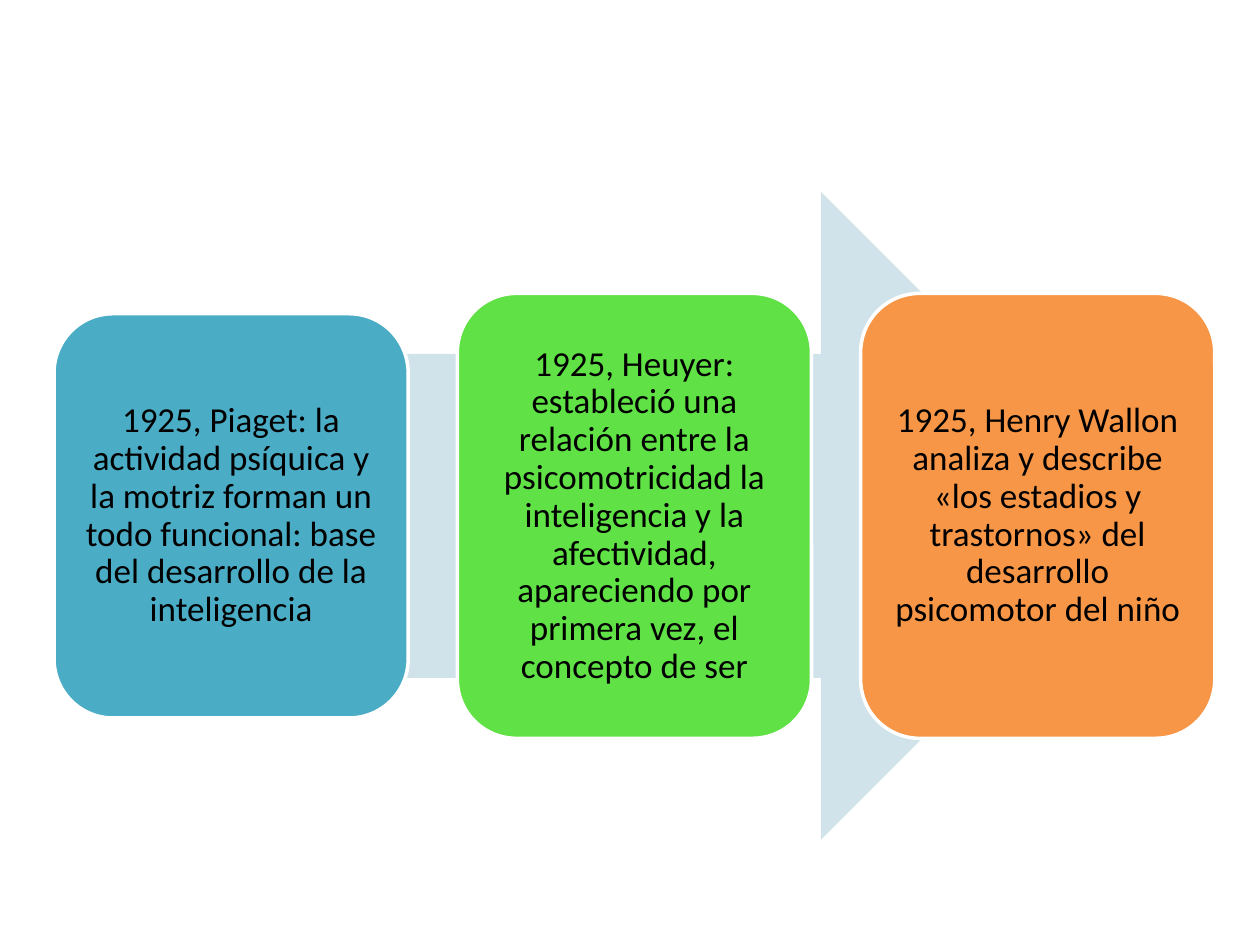
"""Build a slide with three milestones of 1925 laid over a broad arrow."""
from pptx import Presentation
from pptx.dml.color import RGBColor
from pptx.enum.shapes import MSO_SHAPE
from pptx.enum.text import MSO_ANCHOR, PP_ALIGN
from pptx.util import Cm, Pt

BLACK = RGBColor(0x00, 0x00, 0x00)
WHITE = RGBColor(0xFF, 0xFF, 0xFF)
PALE_BLUE = RGBColor(0xD0, 0xE3, 0xEA)
TEAL = RGBColor(0x4B, 0xAC, 0xC6)
GREEN = RGBColor(0x60, 0xE1, 0x46)
ORANGE = RGBColor(0xF7, 0x96, 0x46)

MIDDLE = 10.4
CARD_LEFT, CARD_WIDTH, CARD_STEP = 1.09, 7.14, 8.13

MILESTONES = [
    (TEAL, 8.15, "1925, Piaget: la actividad psíquica y la motriz forman un todo "
                 "funcional: base del desarrollo de la inteligencia"),
    (GREEN, 8.97, "1925, Heuyer: estableció una relación entre la psicomotricidad la "
                  "inteligencia y la afectividad, apareciendo por primera vez, el "
                  "concepto de ser"),
    (ORANGE, 8.97, "1925, Henry Wallon analiza y describe «los estadios y trastornos» "
                   "del desarrollo psicomotor del niño"),
]


def apply_format(target, values):
    for name, value in values.items():
        setattr(target, name, value)


class SlideBuilder:
    frame_format = {
        "word_wrap": True,
        "vertical_anchor": MSO_ANCHOR.MIDDLE,
        "margin_left": Cm(0.2),
        "margin_top": Cm(0.2),
        "margin_right": Cm(0.2),
        "margin_bottom": Cm(0.2),
    }
    para_format = {"alignment": PP_ALIGN.CENTER, "line_spacing": 0.9}
    font_format = {"name": "Calibri", "size": Pt(20)}

    def __init__(self, slide):
        self.slide = slide

    def shape(self, kind, left, width, height, color):
        top = MIDDLE - height / 2
        shape = self.slide.shapes.add_shape(
            kind, Cm(left), Cm(top), Cm(width), Cm(height))
        shape.shadow.inherit = False
        shape.fill.solid()
        shape.fill.fore_color.rgb = color
        return shape

    def arrow(self, left, width, height, color):
        arrow = self.shape(MSO_SHAPE.RIGHT_ARROW, left, width, height, color)
        arrow.line.fill.background()

    def card(self, left, width, height, color, text):
        card = self.shape(MSO_SHAPE.ROUNDED_RECTANGLE, left, width, height, color)
        card.line.color.rgb = WHITE
        card.line.width = Pt(2)
        apply_format(card.text_frame, self.frame_format)
        para = card.text_frame.paragraphs[0]
        apply_format(para, self.para_format)
        span = para.add_run()
        span.text = text
        apply_format(span.font, self.font_format)
        span.font.color.rgb = BLACK


def main():
    deck = Presentation()
    apply_format(deck, {"slide_width": Cm(25.4), "slide_height": Cm(19.05)})
    builder = SlideBuilder(deck.slides.add_slide(deck.slide_layouts[6]))
    builder.arrow(2.51, 20.57, 13.06, PALE_BLUE)
    for index, (color, height, text) in enumerate(MILESTONES):
        left = CARD_LEFT + index * CARD_STEP
        builder.card(left, CARD_WIDTH, height, color, text)
    deck.save("out.pptx")


if __name__ == "__main__":
    main()
